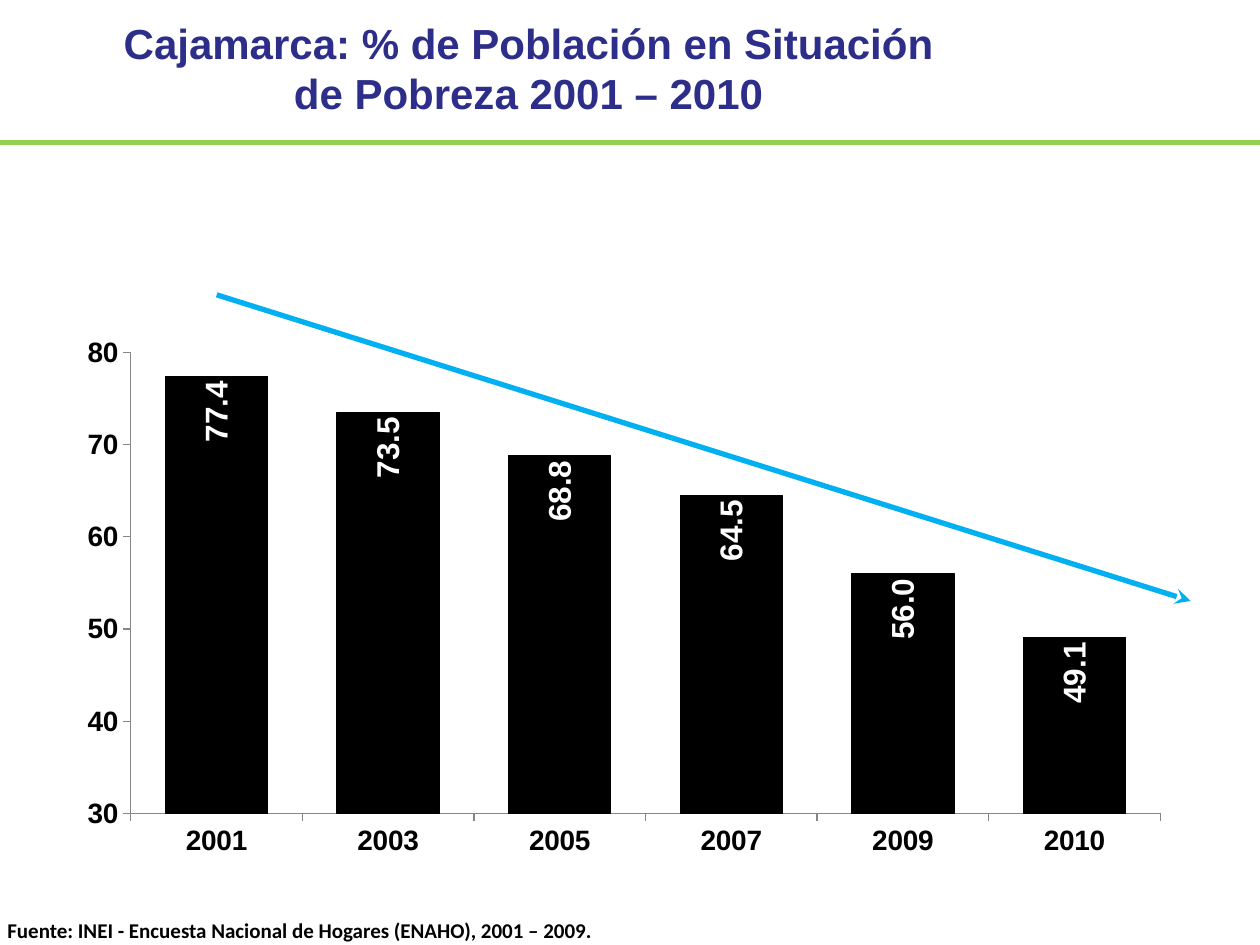
from dataclasses import dataclass

from lxml import etree
from pptx import Presentation
from pptx.chart.axis import _BaseAxis
from pptx.chart.chart import Chart
from pptx.chart.data import CategoryChartData
from pptx.dml.color import RGBColor
from pptx.enum.chart import XL_CHART_TYPE, XL_LABEL_POSITION, XL_TICK_MARK
from pptx.enum.shapes import MSO_CONNECTOR
from pptx.enum.text import PP_ALIGN
from pptx.oxml.ns import qn
from pptx.slide import Slide
from pptx.text.text import Font
from pptx.util import Inches, Pt

STACKED_COLUMNS = XL_CHART_TYPE.COLUMN_STACKED
INSIDE_END = XL_LABEL_POSITION.INSIDE_END
TICK_OUTSIDE = XL_TICK_MARK.OUTSIDE
TICK_NONE = XL_TICK_MARK.NONE
STRAIGHT = MSO_CONNECTOR.STRAIGHT
LEFT = PP_ALIGN.LEFT
CENTER = PP_ALIGN.CENTER

COLORS = {
    "title": "2D2D8A",
    "text": "000000",
    "bar": "000000",
    "label": "FFFFFF",
    "axis": "868686",
    "trend": "00B0F0",
    "rule": "92D050",
}

POVERTY_BY_YEAR = {
    "2001": 77.4,
    "2003": 73.5,
    "2005": 68.8,
    "2007": 64.5,
    "2009": 56.0,
    "2010": 49.1,
}
PLOT_LAYOUT = {"x": 0.068, "y": 0.05, "w": 0.914, "h": 0.81}


@dataclass
class TextBlock:
    lines: list[str]
    left: float
    top: float
    width: float
    height: float
    font: str
    size: int
    color: str
    align: PP_ALIGN


@dataclass
class Line:
    start: tuple[float, float]
    end: tuple[float, float]
    color: str
    arrow: bool = False


TITLE = TextBlock(
    ["Cajamarca: % de Población en Situación", "de Pobreza 2001 – 2010"],
    0, 0.09, 8.39, 0.9, "Arial", 24, "title", CENTER,
)
SOURCE_NOTE = TextBlock(
    ["Fuente: INEI - Encuesta Nacional de Hogares (ENAHO), 2001 – 2009."],
    -0.04, 7.23, 8.68, 0.3, "Calibri", 12, "text", LEFT,
)
TREND_ARROW = Line((1.72, 2.34), (9.45, 4.77), "trend", arrow=True)
TITLE_RULE = Line((0, 1.13), (10, 1.13), "rule")


def rgb(name: str) -> RGBColor:
    return RGBColor.from_string(COLORS[name])


def style_font(font: Font, name: str, size: float, color: str) -> None:
    font.name = name
    font.size = Pt(size)
    font.bold = True
    font.color.rgb = rgb(color)


def draw_text(page: Slide, block: TextBlock) -> None:
    box = page.shapes.add_textbox(
        Inches(block.left), Inches(block.top), Inches(block.width), Inches(block.height)
    )
    frame = box.text_frame
    frame.word_wrap = True
    frame.text = "\n".join(block.lines)
    for para in frame.paragraphs:
        para.alignment = block.align
        for span in para.runs:
            style_font(span.font, block.font, block.size, block.color)


def draw_line(page: Slide, line: Line) -> None:
    connector = page.shapes.add_connector(
        STRAIGHT, *(Inches(value) for value in line.start + line.end)
    )
    connector.line.color.rgb = rgb(line.color)
    connector.line.width = Pt(3)
    properties = connector._element.spPr
    if line.arrow:
        outline = properties.find(qn("a:ln"))
        etree.SubElement(outline, qn("a:tailEnd"), type="stealth")
    etree.SubElement(properties, qn("a:effectLst"))


def set_plot_layout(chart: Chart) -> None:
    plot_area = chart._chartSpace.chart.plotArea
    for layout in plot_area.findall(qn("c:layout")):
        plot_area.remove(layout)
    layout = etree.Element(qn("c:layout"))
    plot_area.insert(0, layout)
    manual = etree.SubElement(layout, qn("c:manualLayout"))
    etree.SubElement(manual, qn("c:layoutTarget"), val="inner")
    for side in ("x", "y"):
        etree.SubElement(manual, qn(f"c:{side}Mode"), val="edge")
    for name, value in PLOT_LAYOUT.items():
        etree.SubElement(manual, qn(f"c:{name}"), val=str(value))


def style_axis(axis: _BaseAxis) -> None:
    axis.has_major_gridlines = False
    axis.major_tick_mark = TICK_OUTSIDE
    axis.minor_tick_mark = TICK_NONE
    axis.format.line.color.rgb = rgb("axis")
    axis.format.line.width = Pt(0.75)
    style_font(axis.tick_labels.font, "Arial", 16, "text")


def draw_poverty_chart(page: Slide) -> None:
    data = CategoryChartData(number_format="0.0")
    data.categories = POVERTY_BY_YEAR.keys()
    data.add_series("Series 1", POVERTY_BY_YEAR.values())
    chart = page.shapes.add_chart(
        STACKED_COLUMNS, Inches(0.43), Inches(2.57), Inches(8.94), Inches(4.52), data
    ).chart
    chart.has_title = False
    chart.has_legend = False
    chart.font.name = "Arial"
    set_plot_layout(chart)

    style_axis(chart.category_axis)
    value_axis = chart.value_axis
    style_axis(value_axis)
    value_axis.minimum_scale = 30
    value_axis.maximum_scale = 80
    value_axis.major_unit = 10
    value_axis.tick_labels.number_format = "0"
    value_axis.tick_labels.number_format_is_linked = False

    plot = chart.plots[0]
    plot.gap_width = 68
    plot.overlap = 100
    plot.vary_by_categories = False
    bars = plot.series[0]
    bars.format.fill.solid()
    bars.format.fill.fore_color.rgb = rgb("bar")
    bars.format.line.color.rgb = rgb("bar")
    bars.format.line.width = Pt(0.75)

    labels = bars.data_labels
    labels.show_value = True
    labels.position = INSIDE_END
    labels.number_format = "#,##0.0"
    labels.number_format_is_linked = False
    style_font(labels.font, "Arial", 18, "label")
    body = labels._element.find(f"{qn('c:txPr')}/{qn('a:bodyPr')}")
    body.set("rot", "-5400000")
    body.set("vert", "horz")


def main() -> None:
    deck = Presentation()
    deck.slide_width = Inches(10)
    deck.slide_height = Inches(7.5)
    page = deck.slides.add_slide(deck.slide_layouts[6])
    draw_line(page, TREND_ARROW)
    draw_poverty_chart(page)
    draw_text(page, SOURCE_NOTE)
    draw_text(page, TITLE)
    draw_line(page, TITLE_RULE)
    deck.save("out.pptx")


if __name__ == "__main__":
    main()
